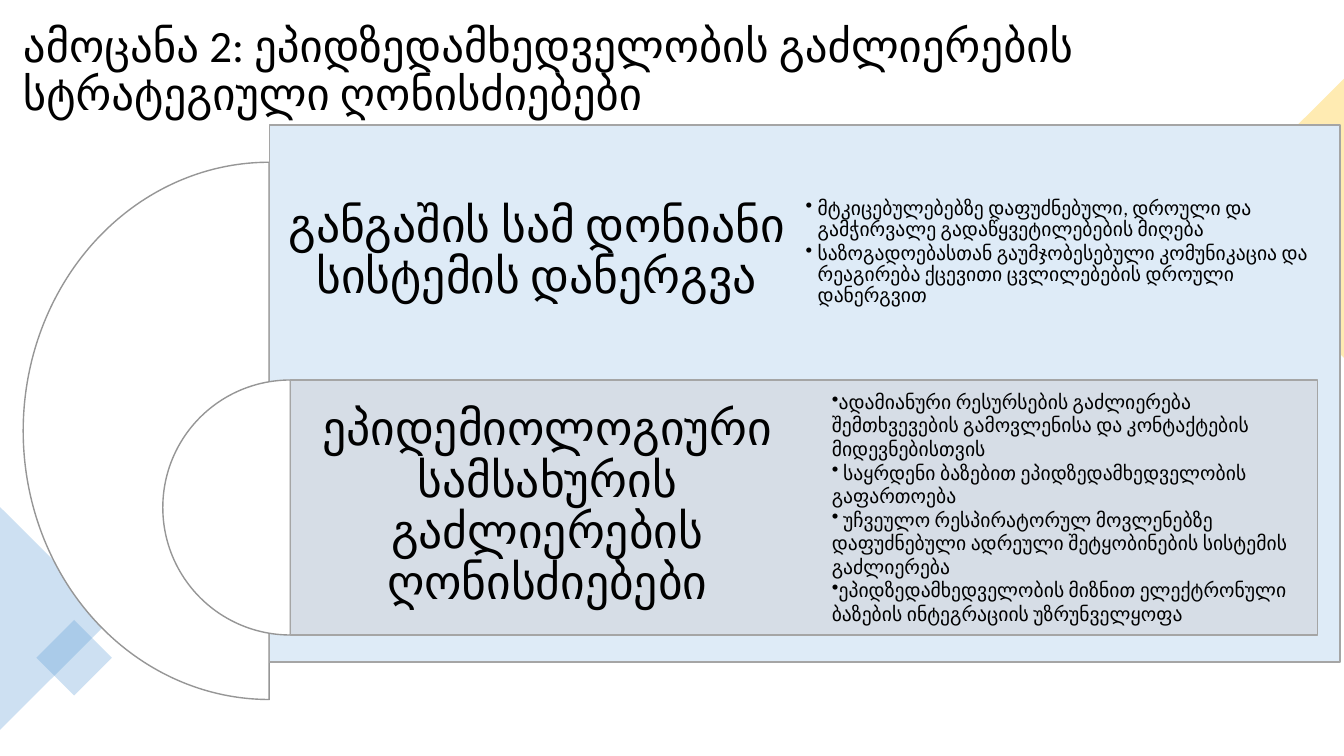
from lxml import etree
from pptx import Presentation
from pptx.dml.color import RGBColor
from pptx.enum.shapes import MSO_SHAPE as Shape
from pptx.enum.text import MSO_ANCHOR as Anchor, PP_ALIGN as Align
from pptx.oxml.ns import qn
from pptx.util import Pt

# Content
TITLE = "ამოცანა 2: ეპიდზედამხედველობის გაძლიერების სტრატეგიული ღონისძიებები"
ALARM = "განგაშის სამ დონიანი სისტემის დანერგვა"
ALARM_POINTS = [
    "მტკიცებულებებზე დაფუძნებული, დროული და გამჭირვალე გადაწყვეტილებების მიღება",
    "საზოგადოებასთან გაუმჯობესებული კომუნიკაცია და რეაგირება ქცევითი ცვლილებების დროული დანერგვით",
]
SERVICE = "ეპიდემიოლოგიური სამსახურის გაძლიერების ღონისძიებები"
SERVICE_POINTS = [
    "ადამიანური რესურსების გაძლიერება შემთხვევების გამოვლენისა და კონტაქტების მიდევნებისთვის",
    " საყრდენი ბაზებით ეპიდზედამხედველობის გაფართოება",
    " უჩვეულო რესპირატორულ მოვლენებზე დაფუძნებული ადრეული შეტყობინების სისტემის გაძლიერება",
    "ეპიდზედამხედველობის მიზნით ელექტრონული ბაზების ინტეგრაციის უზრუნველყოფა",
]

BLACK = RGBColor(0x00, 0x00, 0x00)
WHITE = RGBColor(0xFF, 0xFF, 0xFF)
GOLD = RGBColor(0xFF, 0xC0, 0x00)
BLUE = RGBColor(0x5B, 0x9B, 0xD5)
PALE_BLUE = RGBColor(0xDE, 0xEB, 0xF7)
PALE_GREY = RGBColor(0xD6, 0xDC, 0xE5)
ARC_LINE = RGBColor(0x96, 0x96, 0x96)
BAND_LINE = RGBColor(0xA5, 0xA5, 0xA5)

# Lengths in px, 100 to the inch
PX = 9144
ROW_H = 253

# Decoration: shape, box, rotation, colour
DECOR = [
    (Shape.ISOSCELES_TRIANGLE, (1125, 147, 277, 139), 270, GOLD),
    (Shape.ISOSCELES_TRIANGLE, (-55, 558, 221, 111), 90, BLUE),
    (Shape.RECTANGLE, (47, 626, 53, 53), 45, BLUE),
]

# Bands: box, fill, opacity, pie box size and top, heading, list
BANDS = [
    dict(box=(267, 124, 1062, 533), fill=PALE_BLUE, alpha=100,
         pie=(161, 488, 533), heading=ALARM, points=ALARM_POINTS,
         list_x=(772, 561), style=dict(indent=12, spacing=0.9, after=2)),
    dict(box=(288, 377, 1019, ROW_H), fill=PALE_GREY, alpha=90,
         pie=(377, ROW_H, ROW_H), heading=SERVICE, points=SERVICE_POINTS,
         list_x=(798, 510), style=dict(spacing=1.0)),
]

prs = Presentation()
prs.slide_width, prs.slide_height = 1333 * PX, 750 * PX
s = prs.slides.add_slide(prs.slide_layouts[6])


def emu(box):
    return [round(v * PX) for v in box]


def add_shape(kind, box, fill, alpha=100, line=None, rotation=0):
    sp = s.shapes.add_shape(kind, *emu(box))
    sp.shadow.inherit = False
    sp.rotation = rotation
    sp.fill.solid()
    sp.fill.fore_color.rgb = fill
    if alpha < 100:
        color = sp.fill._xPr.find(qn("a:solidFill"))[0]
        etree.SubElement(color, qn("a:alpha"), val=str(alpha * 1000))
    if line is None:
        sp.line.fill.background()
    else:
        sp.line.color.rgb = line
        sp.line.width = Pt(1)
    return sp


def add_text(paragraphs, box, size=14, align=Align.LEFT, inset=(10, 5),
             spacing=0.9, after=0, bullet=False, indent=0):
    tf = s.shapes.add_textbox(*emu(box)).text_frame
    tf.word_wrap = True
    tf.vertical_anchor = Anchor.MIDDLE
    tf.margin_left = tf.margin_right = inset[0] * PX
    tf.margin_top = tf.margin_bottom = inset[1] * PX
    for i, text in enumerate(paragraphs):
        p = tf.paragraphs[0] if i == 0 else tf.add_paragraph()
        p.alignment = align
        p.line_spacing = spacing
        p.space_after = Pt(after)
        r = p.add_run()
        r.text = text
        r.font.name = "Calibri"
        r.font.size = Pt(size)
        r.font.color.rgb = BLACK
        if bullet:
            pPr = p._p.get_or_add_pPr()
            pPr.set("marL", str(indent * PX))
            pPr.set("indent", str(-indent * PX))
            etree.SubElement(pPr, qn("a:buChar"), char="•")


# Decoration and title
for kind, box, rotation, color in DECOR:
    add_shape(kind, box, color, alpha=30, rotation=rotation)
add_text([TITLE], (13, 9, 1307, 125), size=32)

# Each half circle is centred on the left edge of its band
for band in BANDS:
    x, y, w, h = band["box"]
    pie_y, pie_w, pie_h = band["pie"]
    pie = add_shape(Shape.PIE, (x - pie_w / 2, pie_y, pie_w, pie_h),
                    WHITE, line=ARC_LINE)
    pie.adjustments[0], pie.adjustments[1] = 54, 162
    add_shape(Shape.RECTANGLE, band["box"], band["fill"],
              alpha=band["alpha"], line=BAND_LINE)
    add_text([band["heading"]], (x, y, w / 2, ROW_H), size=34,
             align=Align.CENTER, inset=(14, 14))
    list_x, list_w = band["list_x"]
    add_text(band["points"], (list_x, y, list_w, ROW_H), inset=(27, 27),
             bullet=True, **band["style"])

prs.save("out.pptx")
